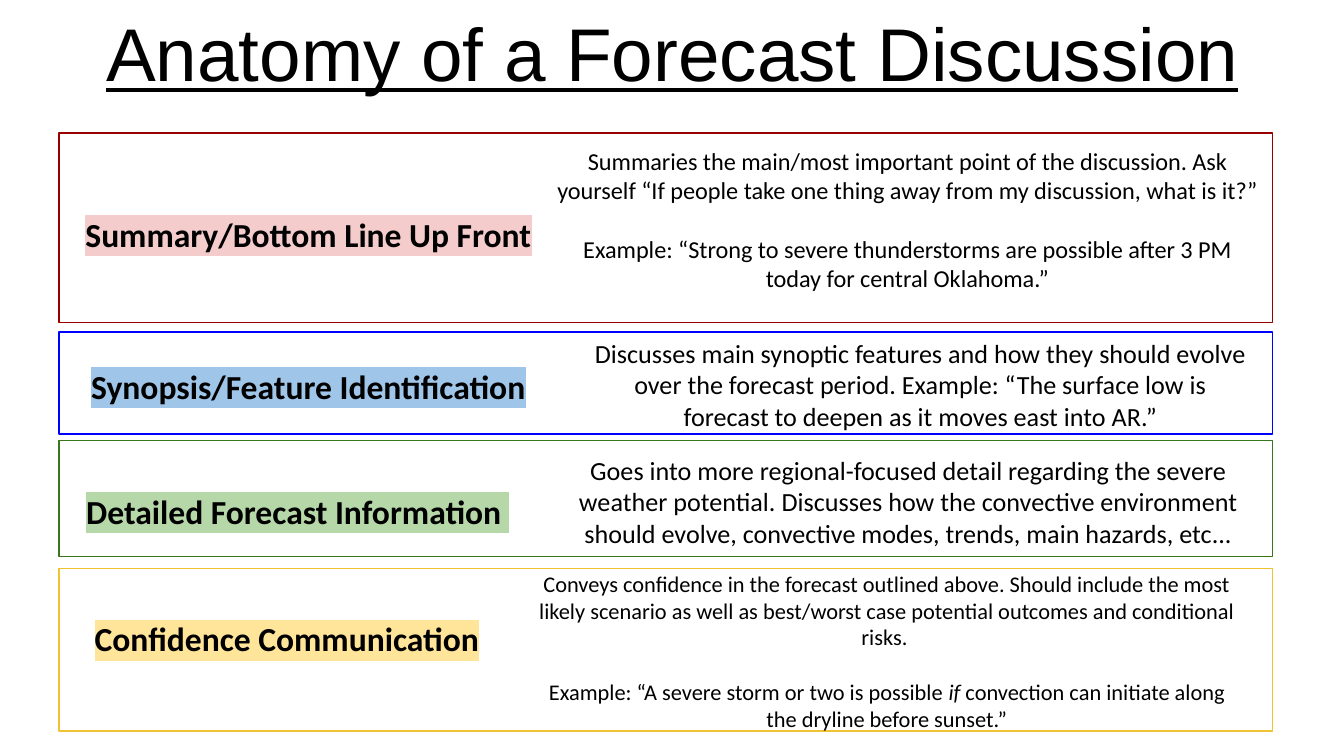
from lxml import etree
from pptx import Presentation
from pptx import util as u
from pptx.dml.color import RGBColor
from pptx.enum import shapes, text
from pptx.oxml import ns

WIDTH = 10
HEIGHT = WIDTH * 9 / 16

COLORS = {
    "black": "000000",
    "red": "980000", "pink": "F4CCCC",
    "blue": "0000FF", "sky": "9FC5E8",
    "green": "38761D", "mint": "B6D7A8",
    "gold": "F1C232", "cream": "FFE599",
}

# top, height, color
FRAMES = [
    (0.99, 1.41, "red"),
    (2.47, 0.76, "blue"),
    (3.28, 0.86, "green"),
    (4.23, 1.21, "gold"),
]

# left, top, words, highlight
LABELS = [
    (0.32, 1.49, "Summary/Bottom Line Up Front", "pink"),
    (0.32, 2.62, "Synopsis/Feature Identification", "sky"),
    (0.24, 3.55, "Detailed Forecast Information ", "mint"),
    (0.16, 4.5, "Confidence Communication", "cream"),
]

# box, size, paragraphs; a paragraph is a list of (words, italic) runs
BODIES = [
    ((4.02, 0.99, 5.46, 1.3), 13, [
        [("Summaries the main/most important point of the discussion. Ask "
          "yourself “If people take one thing away from my discussion, "
          "what is it?”", False)],
        [("Example: “Strong to severe thunderstorms are possible after 3 PM "
          "today for central Oklahoma.”", False)]]),
    ((4.3, 2.41, 5.1, 0.91), 14, [
        [("Discusses main synoptic features and how they should evolve over "
          "the forecast period. Example: “The surface low is forecast to "
          "deepen as it moves east into AR.”", False)]]),
    ((4.19, 3.28, 5.14, 0.91), 14, [
        [("Goes into more regional-focused detail regarding the severe "
          "weather potential. Discusses how the convective environment "
          "should evolve, convective modes, trends, main hazards, etc...",
          False)]]),
    ((3.87, 4.14, 5.46, 1.41), 12, [
        [("Conveys confidence in the forecast outlined above. Should include "
          "the most likely scenario as well as best/worst case potential "
          "outcomes and conditional risks. ", False)],
        [("Example: “A severe storm or two is possible ", False),
         ("if", True),
         (" convection can initiate along the dryline before sunset.”",
          False)]]),
]


def color(name):
    return RGBColor.from_string(COLORS[name])


def inches(box):
    return [u.Inches(n) for n in box]


class Deck:
    line = 1.22  # Calibri line height, in ems

    def __init__(self, slide):
        self.slide = slide

    def style(self, run, **form):
        for key, value in form.items():
            setattr(run.font, key, value)
        run.font.color.rgb = color("black")

    def mark(self, run, name):
        """Highlight a run that already has its color."""
        mark = etree.Element(ns.qn("a:highlight"))
        etree.SubElement(mark, ns.qn("a:srgbClr"), val=COLORS[name])
        run.font._element.find(ns.qn("a:solidFill")).addnext(mark)

    def title(self, box, words):
        shape = self.slide.shapes.title
        shape.left, shape.top, shape.width, shape.height = inches(box)
        frame = shape.text_frame
        frame.auto_size = text.MSO_AUTO_SIZE.NONE
        frame.vertical_anchor = text.MSO_ANCHOR.MIDDLE
        para = frame.paragraphs[0]
        para.alignment = text.PP_ALIGN.CENTER
        run = para.add_run()
        run.text = words
        self.style(run, name="Arial", size=u.Pt(40), underline=True)

    def frame(self, top, height, name):
        shape = self.slide.shapes.add_shape(
            shapes.MSO_SHAPE.RECTANGLE, *inches((0.44, top, 9.03, height)))
        shape.shadow.inherit = False
        shape.fill.background()
        shape.line.color.rgb = color(name)
        shape.line.width = u.Pt(0.75)

    def body(self, box, size, paras, bold=False):
        """Add centred text, one line of space between paragraphs."""
        frame = self.slide.shapes.add_textbox(*inches(box)).text_frame
        frame.word_wrap = True
        frame.auto_size = text.MSO_AUTO_SIZE.SHAPE_TO_FIT_TEXT
        for side in ("left", "top", "right", "bottom"):
            setattr(frame, f"margin_{side}", u.Inches(0.1))
        runs = []
        for i, parts in enumerate(paras):
            para = frame.add_paragraph() if i else frame.paragraphs[0]
            para.alignment = text.PP_ALIGN.CENTER
            para.space_before = u.Pt(round(size * self.line, 1) if i else 0)
            for words, italic in parts:
                run = para.add_run()
                run.text = words
                self.style(run, name="Calibri", size=u.Pt(size),
                           bold=bold, italic=italic)
                runs.append(run)
        return runs

    def label(self, left, top, words, name):
        box = (left, top, 3.95, 0.5)
        for run in self.body(box, 18, [[(words, False)]], bold=True):
            self.mark(run, name)


def main():
    prs = Presentation()
    prs.slide_width, prs.slide_height = inches((WIDTH, HEIGHT))
    deck = Deck(prs.slides.add_slide(prs.slide_layouts[5]))
    deck.title((0, -0.22, WIDTH, 1.21), "Anatomy of a Forecast Discussion")
    for draw, rows in ((deck.frame, FRAMES), (deck.label, LABELS),
                       (deck.body, BODIES)):
        for row in rows:
            draw(*row)
    prs.save("out.pptx")


if __name__ == "__main__":
    main()
